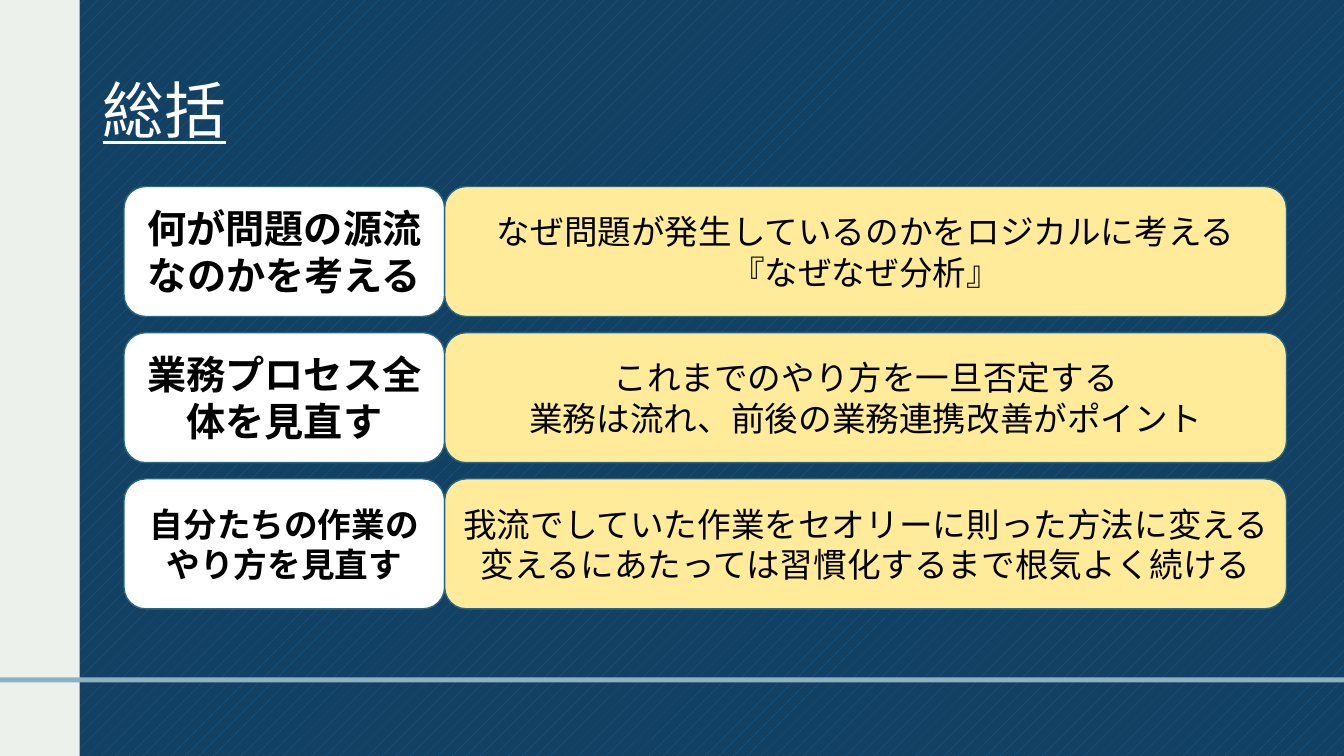
from lxml.etree import SubElement
from pptx import Presentation
from pptx.dml.color import RGBColor
from pptx.enum.dml import MSO_PATTERN
from pptx.enum.shapes import MSO_SHAPE
from pptx.enum.text import MSO_ANCHOR, PP_ALIGN
from pptx.oxml.ns import qn
from pptx.util import Inches, Pt

FONT = "Noto Sans CJK JP"
color = RGBColor.from_string


def add_box(kind, left, top, width, height, fill, line=None):
    box = slide.shapes.add_shape(
        kind, Inches(left), Inches(top), Inches(width), Inches(height))
    box.shadow.inherit = False
    box.fill.solid()
    box.fill.fore_color.rgb = color(fill)
    if line:
        box.line.color.rgb = color(line)
        box.line.width = Pt(1)
    else:
        box.line.fill.background()
    return box


def add_text(box, lines, size, ink, align, bold=False, under=False):
    frame = box.text_frame
    frame.word_wrap = True
    frame.vertical_anchor = MSO_ANCHOR.MIDDLE
    for i, line in enumerate(lines):
        para = frame.add_paragraph() if i else frame.paragraphs[0]
        para.alignment = align
        run = para.add_run()
        run.text = line
        font = run.font
        font.size = Pt(size)
        font.bold = bold
        font.underline = under
        font.color.rgb = color(ink)
        font.name = FONT
        # Japanese glyphs take the East Asian typeface
        SubElement(run._r.get_or_add_rPr(), qn("a:ea"), typeface=FONT)


deck = Presentation()
deck.slide_width = Inches(13.33)
deck.slide_height = Inches(7.5)
slide = deck.slides.add_slide(deck.slide_layouts[6])

# Background pattern
back = slide.background.fill
back.patterned()
back.pattern = MSO_PATTERN.PERCENT_5
back.fore_color.rgb = color("1D6294")
back.back_color.rgb = color("134163")

# Side band and bottom rule
add_box(MSO_SHAPE.RECTANGLE, -0.02, -0.01, 0.81, 7.51, "ECF2EB")
add_box(MSO_SHAPE.RECTANGLE, -0.02, 6.72, 13.35, 0.05, "8DB1C2")

# Title
title = slide.shapes.add_textbox(
    Inches(0.92), Inches(0.4), Inches(11.5), Inches(1.45))
add_text(title, ["総括"], 44, "FFFFFF", PP_ALIGN.LEFT, under=True)
title.text_frame.paragraphs[0].line_spacing = 0.9

# Rows: label, label size, detail lines
rows = [
    ("何が問題の源流なのかを考える", 28,
     ["なぜ問題が発生しているのかをロジカルに考える", "『なぜなぜ分析』"]),
    ("業務プロセス全体を見直す", 28,
     ["これまでのやり方を一旦否定する",
      "業務は流れ、前後の業務連携改善がポイント"]),
    ("自分たちの作業のやり方を見直す", 24,
     ["我流でしていた作業をセオリーに則った方法に変える",
      "変えるにあたっては習慣化するまで根気よく続ける"]),
]
for i, (label, size, lines) in enumerate(rows):
    top = 1.85 + 1.45 * i
    left = add_box(MSO_SHAPE.ROUNDED_RECTANGLE, 1.23, top, 3.18, 1.29,
                   "FFFFFF", "296681")
    add_text(left, [label], size, "000000", PP_ALIGN.CENTER, bold=True)
    right = add_box(MSO_SHAPE.ROUNDED_RECTANGLE, 4.41, top, 8.35, 1.29,
                    "FFEB99", "296681")
    add_text(right, lines, 24, "000000", PP_ALIGN.CENTER)

deck.save("out.pptx")
